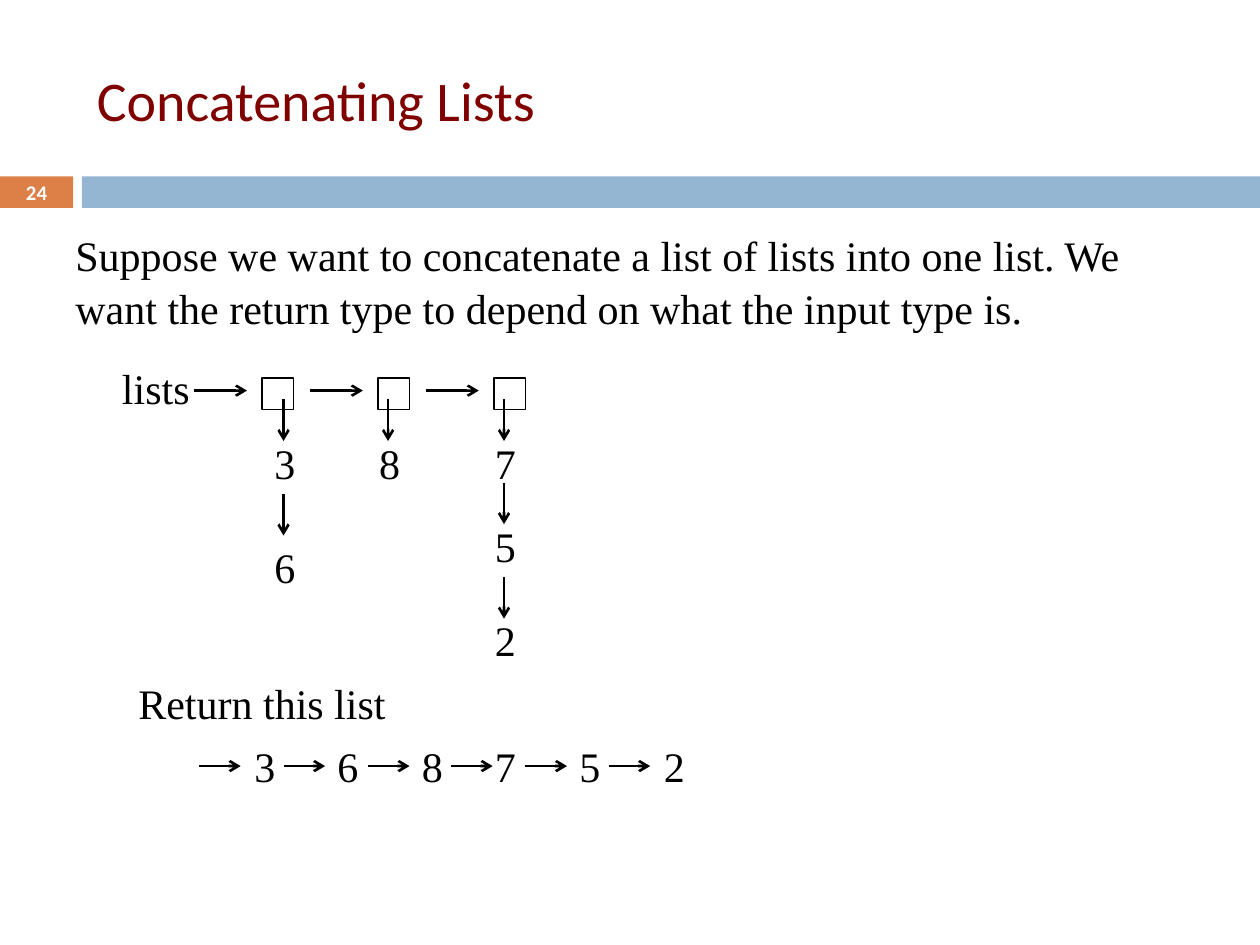
from lxml import etree
from pptx import Presentation
from pptx import util as u
from pptx.dml.color import RGBColor
from pptx.enum import shapes, text
from pptx.oxml import ns

COLORS = {"ink": "000000", "title": "800000", "page": "FFFFFF",
          "tab": "DD8047", "bar": "94B6D2"}
SERIF, SANS = "Times New Roman", "Calibri"
STEP = 0.33  # length of a short arrow


def color(name):
    return RGBColor.from_string(COLORS[name])


def add_text(slide, words, x, y, w, h, size=24, font=SERIF, ink="ink",
             bold=False, align=text.PP_ALIGN.LEFT, middle=False, wrap=True,
             before=0, spacing=None, right=0.1):
    box = slide.shapes.add_textbox(*map(u.Inches, (x, y, w, h)))
    frame = box.text_frame
    frame.word_wrap = wrap
    frame.margin_right = u.Inches(right)
    if middle:
        frame.vertical_anchor = text.MSO_ANCHOR.MIDDLE
    para = frame.paragraphs[0]
    para.alignment = align
    para.space_before = u.Pt(before)
    para.line_spacing = spacing
    run = para.add_run()
    run.text = words
    run.font.size, run.font.name, run.font.bold = u.Pt(size), font, bold
    run.font.color.rgb = color(ink)


def add_box(slide, x, y, w, h, fill=None):
    """Filled band, or an outlined cell when no fill is given."""
    box = slide.shapes.add_shape(shapes.MSO_SHAPE.RECTANGLE,
                                 *map(u.Inches, (x, y, w, h)))
    box.shadow.inherit = False
    if fill:
        box.fill.solid()
        box.fill.fore_color.rgb = color(fill)
        box.line.fill.background()
    else:
        box.fill.background()
        box.line.color.rgb = color("ink")
        box.line.width = u.Pt(0.79)


def add_arrow(slide, x, y, dx=0, dy=0):
    line = slide.shapes.add_connector(
        shapes.MSO_CONNECTOR.STRAIGHT, *map(u.Inches, (x, y, x + dx, y + dy)))
    line.line.color.rgb = color("ink")
    line.line.width = u.Pt(1.5)
    etree.SubElement(line.line._get_or_add_ln(), ns.qn("a:tailEnd"), type="arrow")
    etree.SubElement(line._element.spPr, ns.qn("a:effectLst"))


def add_digit(slide, digit, x, y):
    add_text(slide, digit, x, y, 0.25, 0.5)


def add_frame(slide):
    add_box(slide, 0, 1.4, 0.58, 0.25, "tab")
    add_box(slide, 0.65, 1.4, 9.35, 0.25, "bar")
    add_text(slide, "24", 0, 1.39, 0.58, 0.27, size=11.9, font=SANS,
             ink="page", bold=True, align=text.PP_ALIGN.CENTER, middle=True)
    add_text(slide, "Concatenating Lists", 0.67, 0.25, 8.92, 1.08, size=32,
             font=SANS, ink="title", middle=True, right=0.14)


def add_input(slide):
    add_text(slide, "lists", 0.87, 2.83, 0.74, 0.5, wrap=False)
    # Top row: an arrow into each cell
    for i in range(3):
        add_arrow(slide, 1.54 + 0.92 * i, 3.1, dx=0.42)
        add_box(slide, 2.08 + 0.92 * i, 3, 0.25, 0.25)
    # Columns: arrow x, then (arrow y, digit, digit y) for each item
    columns = [
        (2.25, [(3.17, "3", 3.42), (3.92, "6", 4.25)]),
        (3.08, [(3.17, "8", 3.42)]),
        (4, [(3.17, "7", 3.42), (3.83, "5", 4.08), (4.58, "2", 4.83)]),
    ]
    for x, items in columns:
        for top, digit, y in items:
            add_arrow(slide, x, top, dy=STEP)
            add_digit(slide, digit, x - 0.17, y)


def add_result(slide):
    add_text(slide, "Return this list", 1, 5.33, 2.19, 0.5, wrap=False)
    # Arrow x and digit x for each item
    chain = [("3", 1.58, 1.92), ("6", 2.25, 2.58), ("8", 2.92, 3.25),
             ("7", 3.58, 3.83), ("5", 4.17, 4.5), ("2", 4.83, 5.17)]
    for digit, start, x in chain:
        add_arrow(slide, start, 6.08, dx=STEP)
        add_digit(slide, digit, x, 5.83)


def main():
    deck = Presentation()
    deck.slide_width, deck.slide_height = u.Inches(10), u.Inches(7.5)
    slide = deck.slides.add_slide(deck.slide_layouts[6])
    add_frame(slide)
    add_text(slide, "Suppose we want to concatenate a list of lists into one "
             "list. We want the return type to depend on what the input type is.",
             0.5, 1.75, 8.92, 1.08, before=7, spacing=1.05)
    add_input(slide)
    add_result(slide)
    deck.save("out.pptx")


if __name__ == "__main__":
    main()
